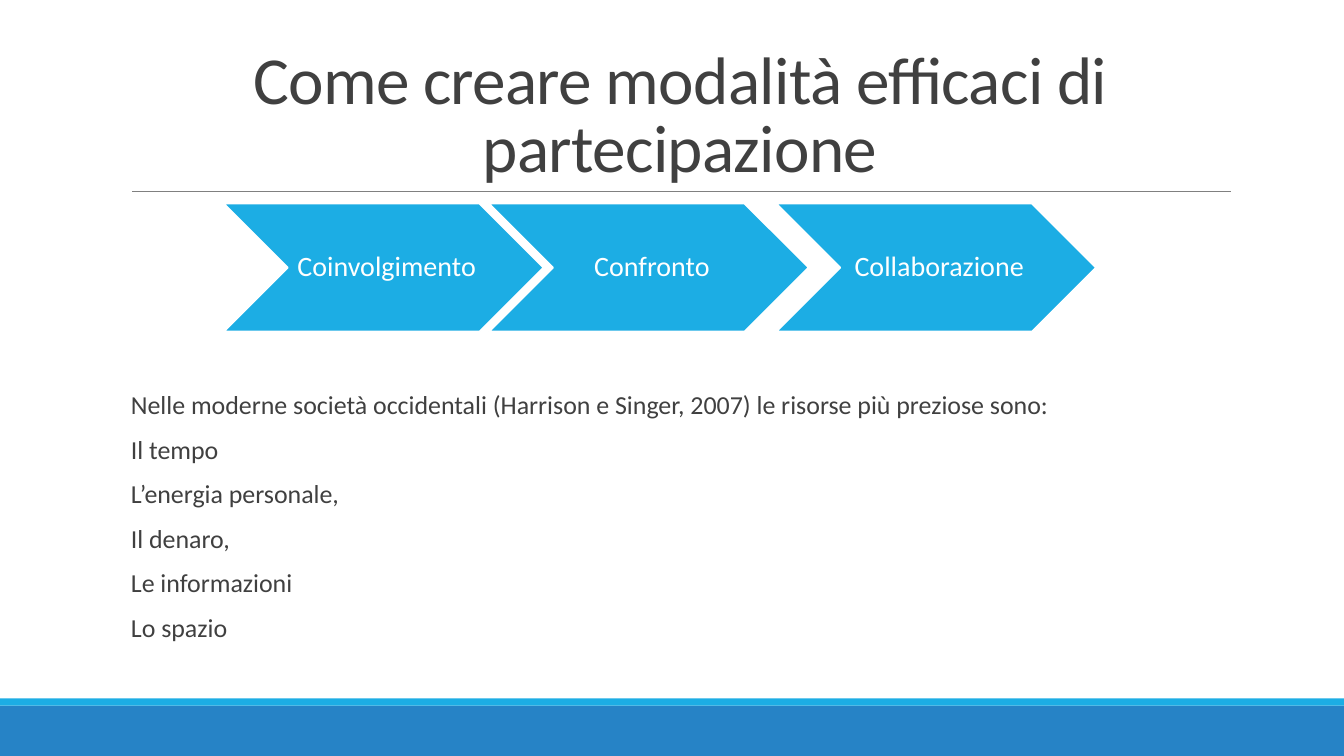
from dataclasses import dataclass

from lxml import etree
from pptx import Presentation
from pptx.dml.color import RGBColor
from pptx.enum.shapes import MSO_CONNECTOR, MSO_SHAPE
from pptx.enum.text import MSO_ANCHOR, PP_ALIGN
from pptx.oxml.ns import qn
from pptx.shapes.autoshape import Shape
from pptx.slide import Slide
from pptx.util import Inches, Pt

RECT, CHEVRON = MSO_SHAPE.RECTANGLE, MSO_SHAPE.CHEVRON
STRAIGHT = MSO_CONNECTOR.STRAIGHT
LEFT, CENTER = PP_ALIGN.LEFT, PP_ALIGN.CENTER
MIDDLE, BOTTOM = MSO_ANCHOR.MIDDLE, MSO_ANCHOR.BOTTOM


@dataclass(frozen=True)
class Theme:
    font: str = "Calibri"
    ink: str = "404040"
    rule: str = "808080"
    sky: str = "1CADE4"
    blue: str = "2683C6"
    white: str = "FFFFFF"
    title: float = 48
    label: float = 20
    body: float = 18.5


@dataclass(frozen=True)
class Box:
    left: float
    top: float
    width: float
    height: float

    def emu(self) -> list[int]:
        return [Inches(n) for n in (self.left, self.top, self.width, self.height)]


@dataclass(frozen=True)
class Step:
    text: str
    left: float


THEME = Theme()
WIDTH, HEIGHT = 13.33, 7.5
BARS = [(Box(0, 7, WIDTH, 0.5), THEME.blue), (Box(0, 6.93, WIDTH, 0.07), THEME.sky)]
STEPS = [Step("Coinvolgimento", 2.22), Step("Confronto", 4.85), Step("Collaborazione", 7.7)]
TITLE = "Come creare modalità efficaci di partecipazione"
BODY = [
    "Nelle moderne società occidentali (Harrison e Singer, 2007) le risorse più preziose sono:",
    "Il tempo",
    "L’energia personale,",
    "Il denaro,",
    "Le informazioni",
    "Lo spazio",
]


def write(shape: Shape, lines: list[str], *, size: float, color: str = THEME.ink,
          align: PP_ALIGN = LEFT, anchor: MSO_ANCHOR = BOTTOM, pitch: float = 1,
          before: float = 0, after: float = 0, track: int = 0, wrap: bool = True,
          inset: tuple[float, float, float, float] = (0.1, 0.05, 0.1, 0.05)) -> None:
    """Fill a shape with paragraphs; track is in hundredths of a point."""
    frame = shape.text_frame
    frame.word_wrap, frame.vertical_anchor = wrap, anchor
    (frame.margin_left, frame.margin_top,
     frame.margin_right, frame.margin_bottom) = map(Inches, inset)
    for i, line in enumerate(lines):
        para = frame.add_paragraph() if i else frame.paragraphs[0]
        para.alignment, para.line_spacing = align, pitch
        para.space_before, para.space_after = Pt(before), Pt(after)
        run = para.add_run()
        run.text = line
        run.font.name, run.font.size = THEME.font, Pt(size)
        run.font.color.rgb = RGBColor.from_string(color)
        if track:
            run._r.get_or_add_rPr().set("spc", str(track))


def draw(slide: Slide, kind: MSO_SHAPE, box: Box, fill: str, edge: str = "") -> Shape:
    shape = slide.shapes.add_shape(kind, *box.emu())
    shape.shadow.inherit = False
    shape.fill.solid()
    shape.fill.fore_color.rgb = RGBColor.from_string(fill)
    if edge:
        shape.line.color.rgb = RGBColor.from_string(edge)
        shape.line.width = Pt(1.25)
    else:
        shape.line.fill.background()
    return shape


def rule(slide: Slide, left: float, right: float, top: float) -> None:
    line = slide.shapes.add_connector(
        STRAIGHT, Inches(left), Inches(top), Inches(right), Inches(top))
    line.line.color.rgb = RGBColor.from_string(THEME.rule)
    line.line.width = Pt(0.5)
    etree.SubElement(line._element.spPr, qn("a:effectLst"))


def main() -> None:
    deck = Presentation()
    deck.slide_width, deck.slide_height = Inches(WIDTH), Inches(HEIGHT)
    slide = deck.slides.add_slide(deck.slide_layouts[6])
    for box, fill in BARS:
        draw(slide, RECT, box, fill)
    rule(slide, 1.31, 12.21, 1.9)

    title = slide.shapes.add_textbox(*Box(1.29, 0.31, 10.91, 1.59).emu())
    write(title, [TITLE], size=THEME.title, align=CENTER, pitch=0.85, track=-50)
    body = slide.shapes.add_textbox(*Box(1.2, 3.7, 11, 2.72).emu())
    write(body, BODY, size=THEME.body, pitch=0.8, before=12, after=2,
          inset=(0.1, 0.05, 0, 0.05))

    for step in STEPS:
        arrow = draw(slide, CHEVRON, Box(step.left, 2.02, 3.17, 1.27),
                     THEME.sky, THEME.white)
        write(arrow, [step.text], size=THEME.label, color=THEME.white, align=CENTER,
              anchor=MIDDLE, pitch=0.9, wrap=False, inset=(0.09, 0.03, 0.03, 0.03))
    deck.save("out.pptx")


if __name__ == "__main__":
    main()
